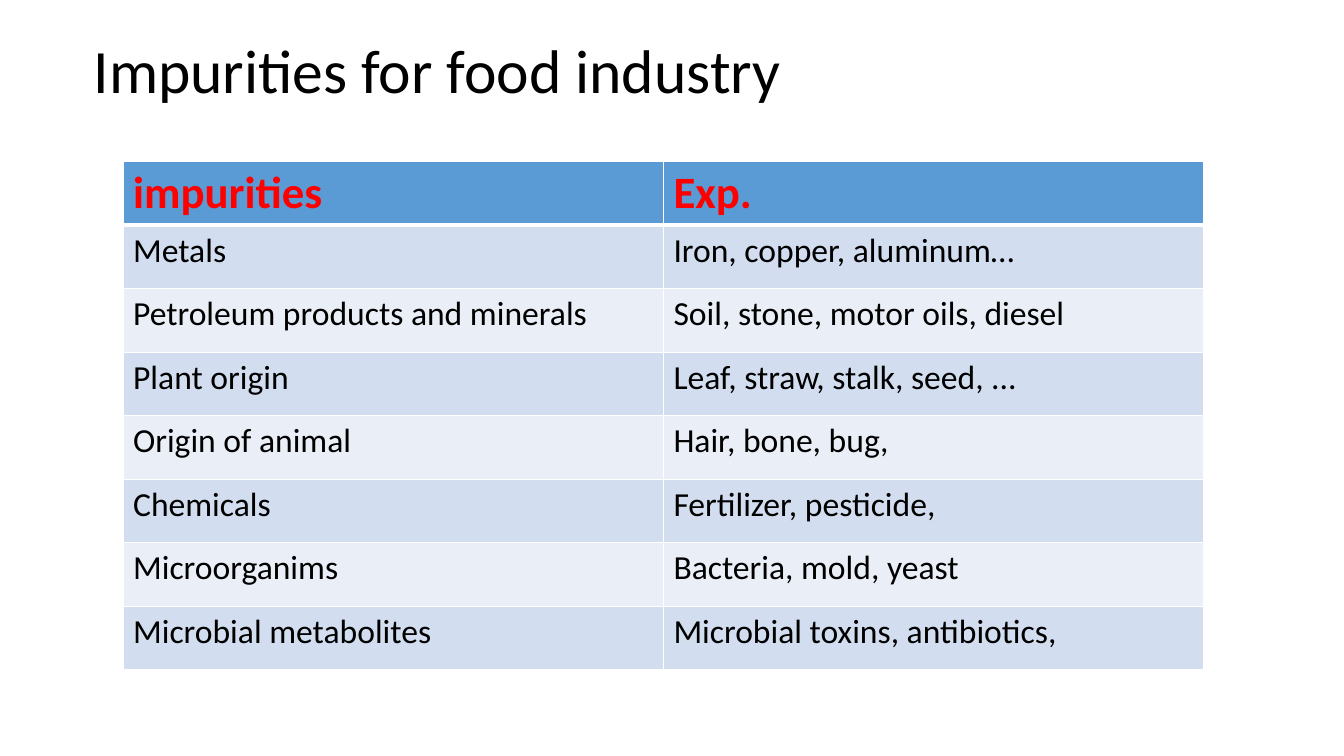
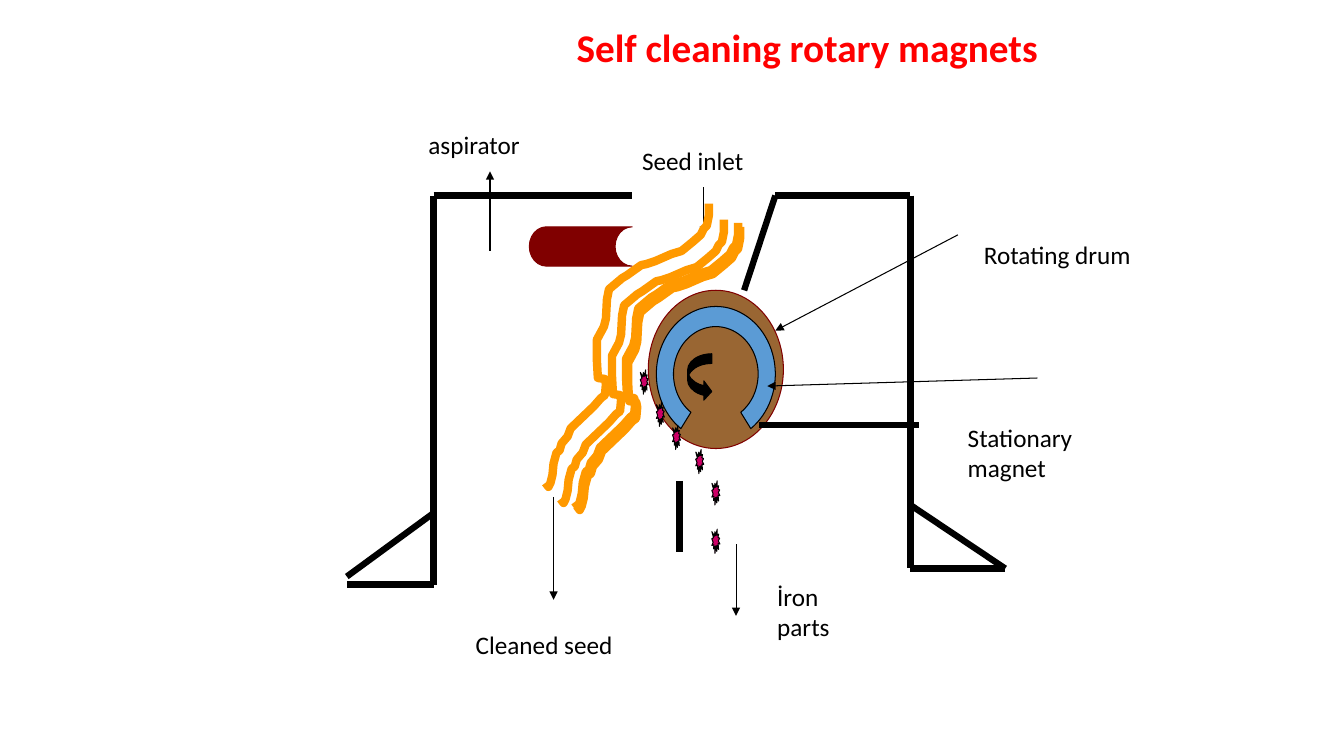
"""Builds two slides on food impurities and a rotary magnet cleaner."""
from math import cos, radians, sin

from lxml import etree
from pptx import Presentation
from pptx.dml.color import RGBColor
from pptx.enum.shapes import MSO_CONNECTOR, MSO_SHAPE
from pptx.enum.text import MSO_ANCHOR, PP_ALIGN
from pptx.oxml.ns import qn
from pptx.util import Inches, Pt

LINE = MSO_CONNECTOR.STRAIGHT
OVAL, PIPE = MSO_SHAPE.OVAL, MSO_SHAPE.FLOWCHART_STORED_DATA
BURST, TURN = MSO_SHAPE.EXPLOSION1, MSO_SHAPE.CURVED_RIGHT_ARROW
TOP, MIDDLE = MSO_ANCHOR.TOP, MSO_ANCHOR.MIDDLE
LEFT, CENTER = PP_ALIGN.LEFT, PP_ALIGN.CENTER

FONT = "Calibri"
BLACK, WHITE, RED, BLUE = "000000", "FFFFFF", "FF0000", "5B9BD5"
BANDS = ["EAEFF7", "D2DEEF"]
BROWN, MAROON, PINK, ORANGE = "996633", "800000", "CC0066", "FF9900"

ROWS = [
    ("impurities", "Exp."),
    ("Metals", "Iron, copper, aluminum…"),
    ("Petroleum products and minerals", "Soil, stone, motor oils, diesel"),
    ("Plant origin", "Leaf, straw, stalk, seed, ..."),
    ("Origin of animal", "Hair, bone, bug,"),
    ("Chemicals", "Fertilizer, pesticide,"),
    ("Microorganims", "Bacteria, mold, yeast"),
    ("Microbial metabolites", "Microbial toxins, antibiotics,"),
]
LABELS = [
    ("Seed inlet", (6.27, 1.39, 1.73, 0.4)),
    ("aspirator", (4.15, 1.23, 1.42, 0.4)),
    ("Rotating drum", (9.66, 2.33, 2.01, 0.4)),
    ("Stationary magnet", (9.5, 4.14, 1.97, 0.7)),
    ("İron parts", (7.61, 5.72, 1.18, 0.4)),
    ("Cleaned seed", (4.62, 6.19, 1.97, 0.4)),
]
FRAME = [
    (4.3, 1.94, 4.3, 5.8), (4.3, 1.94, 6.27, 1.94),
    (7.69, 1.94, 9.03, 1.94), (9.03, 1.94, 9.03, 5.64),
    (7.38, 2.88, 7.69, 1.94), (7.53, 4.22, 9.11, 4.22),
    (6.74, 4.77, 6.74, 5.48), (4.3, 5.8, 3.44, 5.8),
    (9.03, 5.64, 9.97, 5.64), (4.3, 5.09, 3.44, 5.72),
    (9.03, 5.01, 9.97, 5.64),
]
ARROWS = [
    (6.98, 1.86, 6.98, 2.33), (4.86, 2.49, 4.86, 1.7),
    (9.5, 2.33, 7.69, 3.28), (10.29, 3.75, 7.61, 3.83),
    (7.3, 5.4, 7.3, 6.11), (5.49, 4.93, 5.49, 5.95),
]
BITS = [(6.35, 3.67), (6.51, 3.99), (6.67, 4.22),
        (6.9, 4.46), (7.06, 4.77), (7.06, 5.25)]
STREAMS = [(5.7, 2.21), (5.56, 2.18), (5.72, 2.25), (5.41, 2.02)]
FLOW = [
    (1.62, 0), (1.62, 0.12), (1.6, 0.22), (1.57, 0.25), (1.54, 0.31),
    (1.46, 0.38), (1.35, 0.47), (1.25, 0.5), (1.09, 0.57), (1, 0.6),
    (0.95, 0.61), (0.81, 0.71), (0.76, 0.74), (0.63, 0.85), (0.61, 0.95),
    (0.6, 1.14), (0.58, 1.22), (0.51, 1.35), (0.51, 1.55), (0.52, 1.73),
    (0.59, 1.74), (0.6, 1.79), (0.59, 1.9), (0.55, 1.93), (0.48, 2.01),
    (0.25, 2.23), (0.22, 2.31), (0.16, 2.38), (0.14, 2.45), (0.11, 2.47),
    (0.08, 2.58), (0.07, 2.69), (0.05, 2.77), (0.03, 2.81), (0, 2.77),
]


def tint(code):
    return RGBColor.from_string(code)


def style(para, size, color, bold=False):
    font = para.font
    font.name, font.size, font.bold = FONT, Pt(size), bold
    font.color.rgb = tint(color)


def write(slide, text, box, size=18, color=BLACK, bold=False,
          align=LEFT, anchor=TOP, space=1.0):
    frame = slide.shapes.add_textbox(*map(Inches, box)).text_frame
    frame.word_wrap, frame.vertical_anchor = True, anchor
    para = frame.paragraphs[0]
    para.text, para.alignment, para.line_spacing = text, align, space
    style(para, size, color, bold)


def title(slide, text, box, **look):
    write(slide, text, box, anchor=MIDDLE, space=0.9, **look)


def paint(shape, fill, edge, width=0.75):
    shape.shadow.inherit = False
    if fill:
        shape.fill.solid()
        shape.fill.fore_color.rgb = tint(fill)
    else:
        shape.fill.background()
    shape.line.color.rgb = tint(edge)
    shape.line.width = Pt(width)


def block(slide, kind, box, fill, edge=BLACK):
    shape = slide.shapes.add_shape(kind, *map(Inches, box))
    paint(shape, fill, edge)
    return shape


def trace(slide, dots, fill, edge, width, close):
    dots = [(Inches(x), Inches(y)) for x, y in dots]
    pen = slide.shapes.build_freeform(*dots[0])
    pen.add_line_segments(dots[1:], close=close)
    paint(pen.convert_to_shape(), fill, edge, width)


def link(slide, ends, width, arrow=False):
    line = slide.shapes.add_connector(LINE, *map(Inches, ends))
    line.line.color.rgb = tint(BLACK)
    line.line.width = Pt(width)
    props = line.element.spPr
    if arrow:
        etree.SubElement(props.find(qn("a:ln")), qn("a:tailEnd"), type="triangle")
    etree.SubElement(props, qn("a:effectLst"))


def edge(cell, side, width):
    props = cell._tc.get_or_add_tcPr()
    line = etree.SubElement(props, qn("a:ln" + side), w=str(Pt(width)))
    fill = etree.SubElement(line, qn("a:solidFill"))
    etree.SubElement(fill, qn("a:srgbClr"), val=WHITE)


def grid(slide):
    high = 0.63
    box = (1.22, 1.6, 10.72, high * len(ROWS))
    table = slide.shapes.add_table(len(ROWS), 2, *map(Inches, box)).table
    for r, row in enumerate(ROWS):
        table.rows[r].height = Inches(high)
        head = r == 0
        for c, text in enumerate(row):
            cell = table.cell(r, c)
            for side in "LRTB":
                thick = (head and side == "B") or (r == 1 and side == "T")
                edge(cell, side, 3 if thick else 1)
            cell.fill.solid()
            cell.fill.fore_color.rgb = tint(BLUE if head else BANDS[r % 2])
            cell.text = text
            style(cell.text_frame.paragraphs[0], 32 if head else 24,
                  RED if head else BLACK, head)


def arc(rx, ry, turns):
    return [(7.1 + rx * cos(radians(t)), 3.71 + ry * sin(radians(t)))
            for t in turns]


def draw(slide):
    block(slide, OVAL, (6.43, 2.88, 1.34, 1.57), BROWN, MAROON)
    turns = range(126, 415, 4)
    ring = arc(0.59, 0.67, turns) + arc(0.42, 0.47, reversed(turns))
    trace(slide, ring, BLUE, BLACK, 0.75, True)
    block(slide, PIPE, (5.25, 2.25, 1.02, 0.39), MAROON, MAROON)
    for ends in FRAME:
        link(slide, ends, 4.5)
    for ends in ARROWS:
        link(slide, ends, 0.75, True)
    for spot in BITS:
        block(slide, BURST, (*spot, 0.08, 0.24), PINK)
    for left, top in STREAMS:
        dots = [(left + x, top + y) for x, y in FLOW]
        trace(slide, dots, None, ORANGE, 6, False)
    turn = block(slide, TURN, (6.82, 3.51, 0.24, 0.47), BLACK)
    for i, value in enumerate((0.4, 0.8, 0.33)):
        turn.adjustments[i] = value
    for text, box in LABELS:
        write(slide, text, box)


def main():
    deck = Presentation()
    deck.slide_width, deck.slide_height = Inches(13.33), Inches(7.5)
    first, second = (deck.slides.add_slide(deck.slide_layouts[6]) for _ in range(2))
    title(first, "Impurities for food industry", (0.83, 0, 11.5, 1.45), size=44)
    grid(first)
    title(second, "Self cleaning rotary magnets", (3.39, 0.23, 9.23, 0.53),
          size=28, color=RED, bold=True, align=CENTER)
    draw(second)
    deck.save("out.pptx")


if __name__ == "__main__":
    main()
